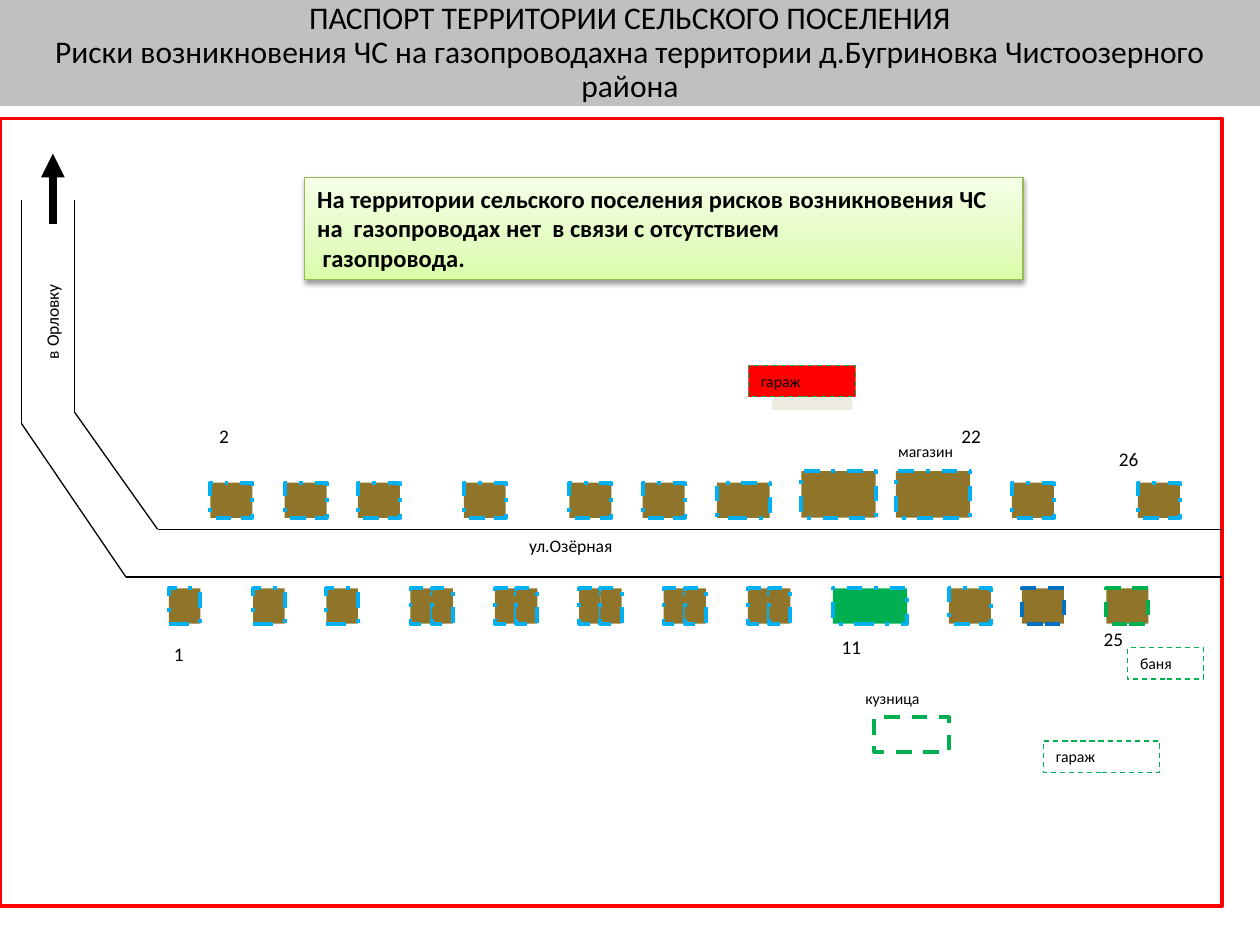
import copy
from dataclasses import dataclass

import lxml.etree
import pptx
import pptx.dml.color
import pptx.enum.dml
import pptx.enum.shapes
import pptx.enum.text
import pptx.oxml.ns
import pptx.util

Pt = pptx.util.Pt
qn = pptx.oxml.ns.qn
Dash = pptx.enum.dml.MSO_LINE

COLOURS = {
    "black": "000000", "white": "FFFFFF", "header": "C0C0C0", "red": "FF0000",
    "brown": "8F7429", "sky": "00B0F0", "blue": "0070C0", "green": "00B050",
    "cream": "EEECE1", "lime_edge": "98B955",
    "lime_deep": "DAFDA7", "lime": "E4FCC2", "lime_pale": "F5FFE7",
}


@dataclass
class Building:
    left: float
    top: float
    width: float
    height: float
    fill: str = "brown"
    edge: str = "sky"
    weight: float = 2.25
    dash: object = Dash.DASH_DOT
    label: str = ""


@dataclass
class Caption:
    left: float
    top: float
    width: float
    height: float
    text: str
    size: float = 11
    wrap: bool = True
    rotation: float = 0


def colour(name: str) -> pptx.dml.color.RGBColor:
    return pptx.dml.color.RGBColor.from_string(COLOURS[name])


def format_text(frame, size: float, bold: bool = False) -> None:
    for paragraph in frame.paragraphs:
        for run in paragraph.runs:
            run.font.name = "Calibri"
            run.font.size = Pt(size)
            run.font.bold = bold
            run.font.color.rgb = colour("black")


def draw_building(slide, item: Building):
    block = slide.shapes.add_shape(
        pptx.enum.shapes.MSO_SHAPE.RECTANGLE,
        Pt(item.left), Pt(item.top), Pt(item.width), Pt(item.height))
    block.shadow.inherit = False
    block.fill.solid()
    block.fill.fore_color.rgb = colour(item.fill)
    block.line.color.rgb = colour(item.edge)
    block.line.width = Pt(item.weight)
    if item.dash is not None:
        block.line.dash_style = item.dash
    if item.label:
        frame = block.text_frame
        frame.text = item.label
        frame.vertical_anchor = pptx.enum.text.MSO_ANCHOR.TOP
        for paragraph in frame.paragraphs:
            paragraph.alignment = pptx.enum.text.PP_ALIGN.LEFT
        format_text(frame, 9)
    return block


def draw_caption(slide, item: Caption) -> None:
    box = slide.shapes.add_textbox(
        Pt(item.left), Pt(item.top), Pt(item.width), Pt(item.height))
    box.rotation = item.rotation
    frame = box.text_frame
    frame.word_wrap = item.wrap
    if item.wrap:
        frame.margin_left = frame.margin_right = Pt(5)
        frame.margin_top = frame.margin_bottom = Pt(2.9)
    frame.text = item.text
    format_text(frame, item.size)


def draw_line(slide, start: tuple, end: tuple, weight: float = 0.75):
    line = slide.shapes.add_connector(
        pptx.enum.shapes.MSO_CONNECTOR.STRAIGHT,
        Pt(start[0]), Pt(start[1]), Pt(end[0]), Pt(end[1]))
    line.line.color.rgb = colour("black")
    line.line.width = Pt(weight)
    lxml.etree.SubElement(line._element.spPr, qn("a:effectLst"))
    return line


def draw_title(slide) -> None:
    title = slide.shapes.title
    title.left, title.top, title.width, title.height = Pt(0), Pt(0), Pt(720), Pt(60.5)
    title.fill.solid()
    title.fill.fore_color.rgb = colour("header")
    frame = title.text_frame
    frame.text = ("ПАСПОРТ ТЕРРИТОРИИ СЕЛЬСКОГО ПОСЕЛЕНИЯ\n"
                  "Риски возникновения ЧС на газопроводахна территории "
                  "д.Бугриновка Чистоозерного района")
    frame.auto_size = pptx.enum.text.MSO_AUTO_SIZE.NONE
    frame.word_wrap = True
    frame.vertical_anchor = pptx.enum.text.MSO_ANCHOR.MIDDLE
    frame.margin_left = frame.margin_right = Pt(2.9)
    frame.margin_top = frame.margin_bottom = Pt(1.4)
    for paragraph in frame.paragraphs:
        paragraph.alignment = pptx.enum.text.PP_ALIGN.CENTER
        paragraph.line_spacing = 0.9
    format_text(frame, 18)


def draw_notice(slide) -> None:
    notice = draw_building(slide, Building(
        174.2, 101.5, 410.4, 58.3, "lime", "lime_edge", 0.75, None,
        "На территории сельского поселения рисков возникновения ЧС "
        "на  газопроводах нет  в связи с отсутствием\n газопровода."))
    format_text(notice.text_frame, 14, bold=True)
    notice.fill.gradient()
    notice.fill.gradient_angle = 90
    stops = notice._element.spPr.find(qn("a:gradFill")).find(qn("a:gsLst"))
    stops.append(copy.deepcopy(stops[-1]))
    shades = [(0, "lime_deep"), (0.35, "lime"), (1, "lime_pale")]
    for stop, (position, shade) in zip(notice.fill.gradient_stops, shades):
        stop.position = position
        stop.color.rgb = colour(shade)
    effects = notice._element.spPr.find(qn("a:effectLst"))
    shadow = lxml.etree.SubElement(
        effects, qn("a:outerShdw"), blurRad=str(Pt(3.1)), dist=str(Pt(1.6)),
        dir="5400000", rotWithShape="0")
    tint = lxml.etree.SubElement(shadow, qn("a:srgbClr"), val=COLOURS["black"])
    lxml.etree.SubElement(tint, qn("a:alpha"), val="38000")


ROAD_EDGES = [
    [(698.4, 329.8), (72, 329.8), (12.2, 241.9), (12.2, 114.5)],
    [(698.4, 302.4), (90, 302.4), (42.5, 235.4), (42.5, 114.5)],
]
NORTH, SOUTH, DEPTH = 275.8, 336.2, 20.2
EVEN_SIDE = [(x, 24) for x in (120.2, 162.7, 204.5, 265, 325.4, 367.2, 578.2, 650.2)]
EVEN_SIDE.append((409.7, 30.2))
SEMI_DETACHED = [282.8 + 12.1 * half + 60.4 * 0 - 48.2 + 48.2 * pair
                 for pair in range(5) for half in range(2)]
ODD_SIDE = [(x, 18) for x in (96.5, 144.7, 186.5)]
ODD_SIDE += [(x, 12.2) for x in SEMI_DETACHED] + [(542.2, 24)]

BUILDINGS = [
    *(Building(x, NORTH, width, DEPTH) for x, width in EVEN_SIDE),
    *(Building(x, 269.3, 42.5, 26.6) for x in (457.9, 511.9)),
    *(Building(x, SOUTH, width, DEPTH) for x, width in ODD_SIDE),
    Building(475.9, SOUTH, 42.5, DEPTH, fill="green"),
    Building(583.9, SOUTH, 24, DEPTH, edge="blue", dash=Dash.DASH),
    Building(632.2, SOUTH, 24, DEPTH, edge="green", dash=Dash.DASH),
    Building(439.9, 215.3, 48.2, 20.2, "cream", "white", dash=None),
    Building(427.7, 208.8, 61.2, 18, "red", "green", 0.75, Dash.DASH, "гараж"),
    Building(644.4, 370.1, 43.2, 18, "white", "green", 0.75, Dash.DASH, "баня"),
    Building(596.2, 423.4, 66.2, 18, "white", "green", 0.75, Dash.DASH, "гараж"),
    Building(499.7, 409.7, 42.5, 20.2, "white", "green", dash=Dash.DASH),
]
CAPTIONS = [
    Caption(0.7, 173.5, 58.3, 19.4, "в Орловку", 10, False, 270),
    Caption(295.2, 302.4, 63.4, 19.4, "ул.Озёрная", 10, False),
    Caption(506.2, 249.1, 46.1, 18, "магазин", 9, False),
    Caption(487.4, 390.2, 45.4, 18, "кузница", 9, False),
    *(Caption(x, y, 46.8, 18.7, number) for x, y, number in [
        (625.7, 355.7, "25"), (634.3, 252.7, "26"), (94.3, 364.3, "1"),
        (120.2, 239.8, "2"), (544.3, 239.8, "22"), (475.9, 360, "11")]),
]


def main() -> None:
    deck = pptx.Presentation()
    deck.slide_width, deck.slide_height = Pt(720), Pt(540)
    slide = deck.slides.add_slide(deck.slide_layouts[5])
    draw_title(slide)
    draw_building(slide, Building(0, 67.7, 698.4, 450, "white", "red", 2, None))
    for edge in ROAD_EDGES:
        for start, end in zip(edge, edge[1:]):
            draw_line(slide, start, end)
    direction = draw_line(slide, (30.2, 128.2), (30.2, 87.8), 4.5)
    lxml.etree.SubElement(
        direction.line._get_or_add_ln(), qn("a:tailEnd"), type="triangle")
    for building in BUILDINGS:
        draw_building(slide, building)
    for caption in CAPTIONS:
        draw_caption(slide, caption)
    draw_notice(slide)
    deck.save("out.pptx")


if __name__ == "__main__":
    main()
